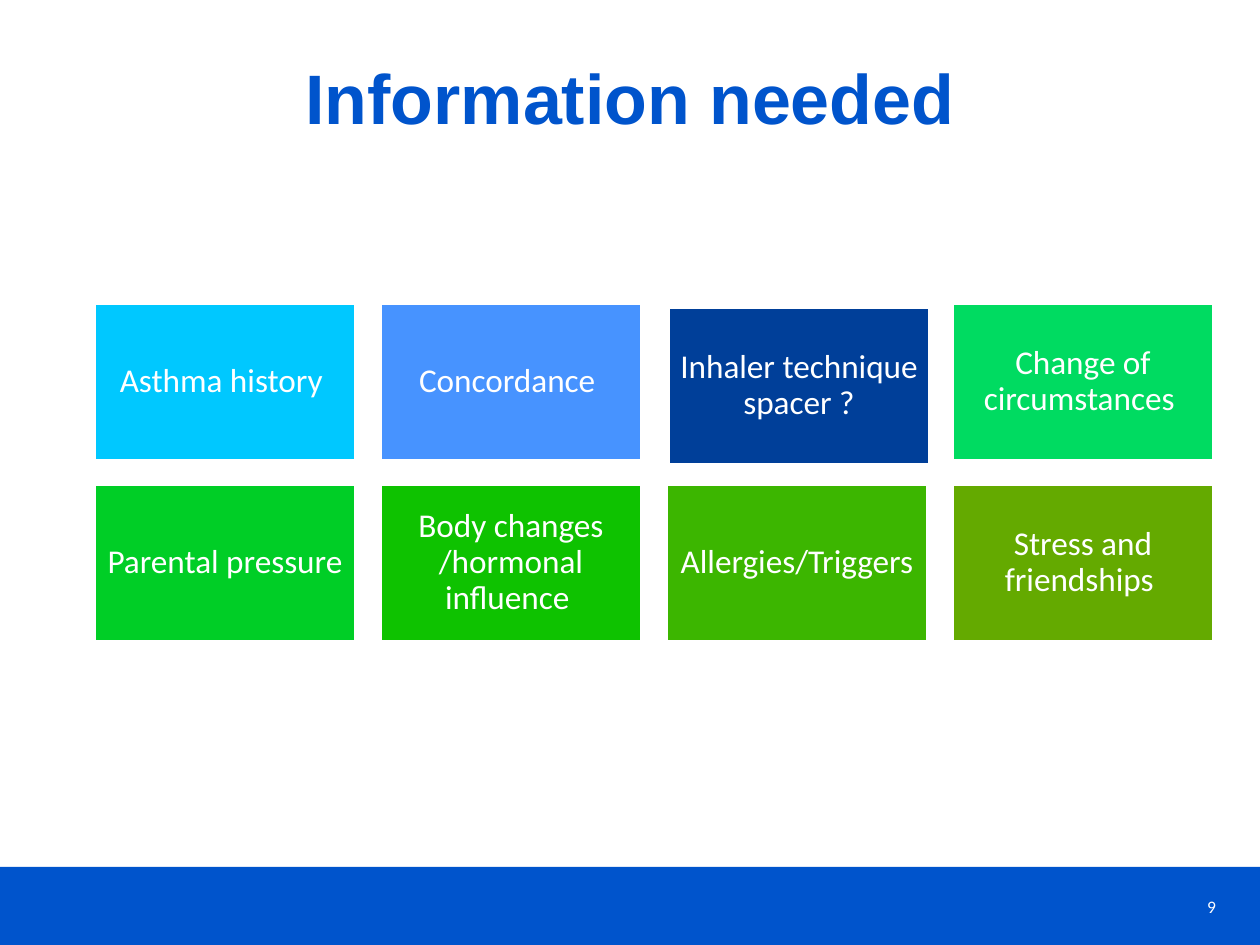
from dataclasses import dataclass

from pptx import Presentation
from pptx.dml.color import RGBColor
from pptx.enum.shapes import MSO_SHAPE
from pptx.enum.text import MSO_ANCHOR, PP_ALIGN
from pptx.util import Emu, Pt

RECT = MSO_SHAPE.RECTANGLE
TOP, MIDDLE = MSO_ANCHOR.TOP, MSO_ANCHOR.MIDDLE
CENTER, RIGHT = PP_ALIGN.CENTER, PP_ALIGN.RIGHT
BLUE, WHITE = "0054CC", "FFFFFF"
PX_PER_INCH = 126
COLUMNS = 4
CARD_W, CARD_H = 260, 156
LEFT, UPPER = 95, 304
STEP_X, STEP_Y = 286, 181


@dataclass(frozen=True)
class Card:
    text: str
    fill: str
    dx: int = 0
    dy: int = 0


@dataclass(frozen=True)
class Style:
    font: str
    size: int
    color: str
    align: PP_ALIGN
    anchor: MSO_ANCHOR
    margins: tuple[int, int, int, int]
    bold: bool = False
    spacing: float = 1.0


TITLE = Style("Arial", 40, BLUE, CENTER, TOP, (9, 10, 9, 5), True, 0.9)
LABEL = Style("Calibri", 19, WHITE, CENTER, MIDDLE, (10, 10, 10, 10), spacing=0.9)
NUMBER = Style("Calibri", 10, WHITE, RIGHT, TOP, (13, 6, 13, 6))

CARDS = [
    Card("Asthma history ", "00C8FF"),
    Card("Concordance ", "4793FF"),
    Card("Inhaler technique spacer ?", "003F99", 2, 4),
    Card("Change of circumstances ", "00DB61"),
    Card("Parental pressure ", "00CE26"),
    Card("Body changes /hormonal influence ", "0EC200"),
    Card("Allergies/Triggers", "3CB600"),
    Card("Stress and friendships ", "64AA00"),
]


def px(n: int) -> Emu:
    return Emu(round(n * 914400 / PX_PER_INCH))


def rgb(color: str) -> RGBColor:
    return RGBColor.from_string(color)


def write(sp, text: str, style: Style) -> None:
    tf = sp.text_frame
    left, top, right, bottom = map(px, style.margins)
    frame = {"word_wrap": True, "vertical_anchor": style.anchor,
             "margin_left": left, "margin_top": top,
             "margin_right": right, "margin_bottom": bottom}
    for name, value in frame.items():
        setattr(tf, name, value)
    p = tf.paragraphs[0]
    p.alignment = style.align
    p.line_spacing = style.spacing
    r = p.add_run()
    r.text = text
    font = {"name": style.font, "size": Pt(style.size), "bold": style.bold}
    for name, value in font.items():
        setattr(r.font, name, value)
    r.font.color.rgb = rgb(style.color)


def add_rect(s, x: int, y: int, w: int, h: int, fill: str):
    sp = s.shapes.add_shape(RECT, px(x), px(y), px(w), px(h))
    sp.shadow.inherit = False
    sp.fill.solid()
    sp.fill.fore_color.rgb = rgb(fill)
    sp.line.fill.background()
    return sp


def add_text(s, x: int, y: int, w: int, h: int, text: str, style: Style) -> None:
    write(s.shapes.add_textbox(px(x), px(y), px(w), px(h)), text, style)


def add_card(s, index: int, card: Card) -> None:
    row, column = divmod(index, COLUMNS)
    x = LEFT + column * STEP_X + card.dx
    y = UPPER + row * STEP_Y + card.dy
    sp = add_rect(s, x, y, CARD_W, CARD_H, card.fill)
    sp.line.color.rgb = rgb(WHITE)
    sp.line.width = Pt(1)
    write(sp, card.text, LABEL)


def main() -> None:
    prs = Presentation()
    prs.slide_width, prs.slide_height = px(1260), px(945)
    s = prs.slides.add_slide(prs.slide_layouts[6])
    add_rect(s, 0, 867, 1260, 78, BLUE)
    add_text(s, 1099, 890, 130, 34, "9", NUMBER)
    add_text(s, 72, 54, 1116, 134, "Information needed", TITLE)
    for index, card in enumerate(CARDS):
        add_card(s, index, card)
    prs.save("out.pptx")


if __name__ == "__main__":
    main()
